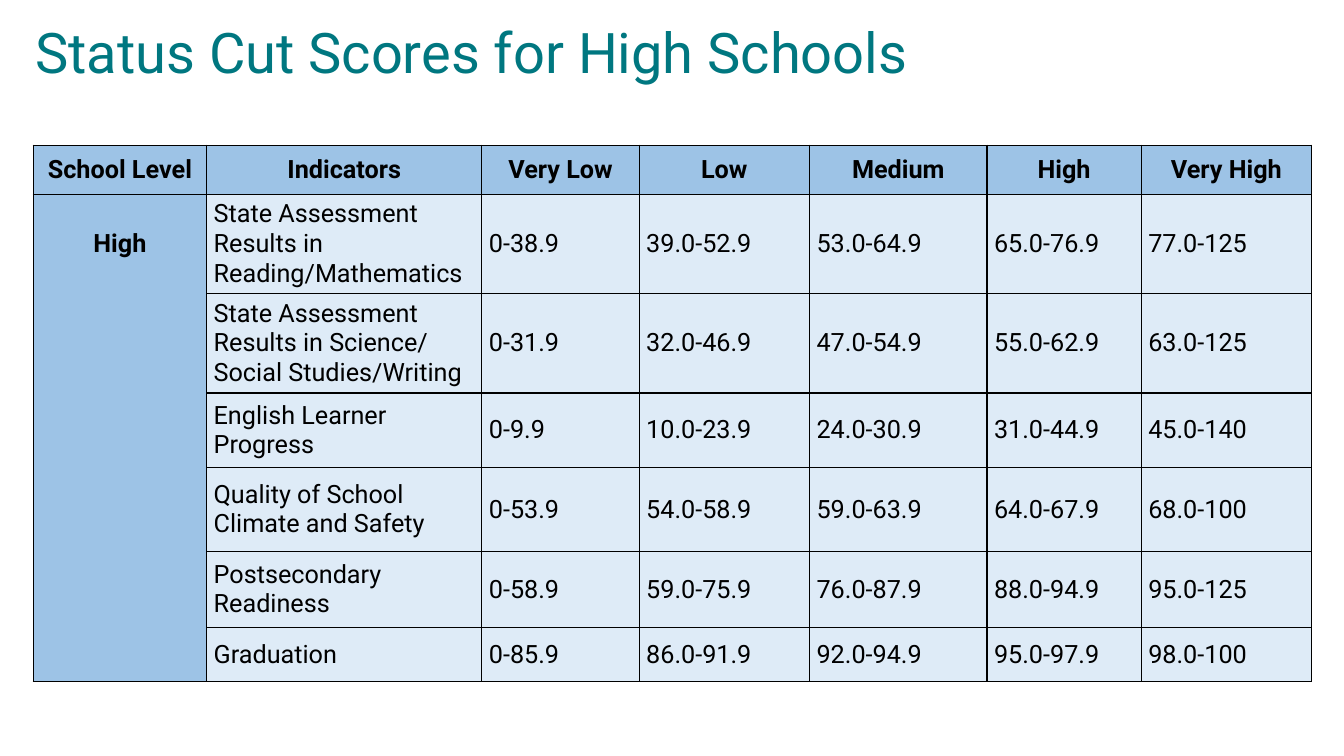
import pptx
import pptx.util
import pptx.dml.color
import pptx.enum.text
import pptx.oxml.ns
import lxml.etree

Inches, Pt = pptx.util.Inches, pptx.util.Pt
RGB = pptx.dml.color.RGBColor.from_string
PP_ALIGN = pptx.enum.text.PP_ALIGN
MIDDLE = pptx.enum.text.MSO_ANCHOR.MIDDLE
qn = pptx.oxml.ns.qn

COLORS = {"title": "007780", "header": "9DC3E6", "body": "DEEBF7", "ink": "000000"}
FONT = "Roboto"


def set_border(cell, side, visible):
    ln = lxml.etree.SubElement(cell._tc.get_or_add_tcPr(), qn(f"a:ln{side}"), w=str(Pt(1)))
    if visible:
        fill = lxml.etree.SubElement(ln, qn("a:solidFill"))
        lxml.etree.SubElement(fill, qn("a:srgbClr"), val=COLORS["ink"])
    else:
        lxml.etree.SubElement(ln, qn("a:noFill"))


prs = pptx.Presentation()
prs.slide_width, prs.slide_height = Inches(13.33), Inches(7.5)
s = prs.slides.add_slide(prs.slide_layouts[5])

# Title
title = s.shapes.title
title.left, title.top, title.width, title.height = 0, 0, Inches(13.33), Inches(1.1)
tf = title.text_frame
tf.text = "Status Cut Scores for High Schools"
tf.word_wrap = True
tf.vertical_anchor = MIDDLE
p = tf.paragraphs[0]
p.alignment = PP_ALIGN.LEFT
p.line_spacing = 0.9
p._p.get_or_add_pPr().set("marL", str(Inches(0.25)))
r = p.runs[0]
r.font.name, r.font.size = FONT, Pt(40)
r.font.color.rgb = RGB(COLORS["title"])

# Cut scores
rows = [
    ["School Level", "Indicators", "Very Low", "Low", "Medium", "High", "Very High"],
    ["High", "State Assessment Results in Reading/Mathematics",
     "0-38.9", "39.0-52.9", "53.0-64.9", "65.0-76.9", "77.0-125"],
    ["", "State Assessment Results in Science/\nSocial Studies/Writing",
     "0-31.9", "32.0-46.9", "47.0-54.9", "55.0-62.9", "63.0-125"],
    ["", "English Learner Progress",
     "0-9.9", "10.0-23.9", "24.0-30.9", "31.0-44.9", "45.0-140"],
    ["", "Quality of School Climate and Safety",
     "0-53.9", "54.0-58.9", "59.0-63.9", "64.0-67.9", "68.0-100"],
    ["", "Postsecondary Readiness",
     "0-58.9", "59.0-75.9", "76.0-87.9", "88.0-94.9", "95.0-125"],
    ["", "Graduation",
     "0-85.9", "86.0-91.9", "92.0-94.9", "95.0-97.9", "98.0-100"],
]
col_widths = [1.72, 2.73, 1.56, 1.69, 1.76, 1.53, 1.69]
row_heights = [0.49, 0.98, 0.99, 0.74, 0.83, 0.76, 0.53]

# Table
table = s.shapes.add_table(len(rows), len(col_widths), Inches(0.33), Inches(1.44),
                           Inches(sum(col_widths)), Inches(sum(row_heights))).table
table.first_row = table.horz_banding = False
for col, width in zip(table.columns, col_widths):
    col.width = Inches(width)
for row, height in zip(table.rows, row_heights):
    row.height = Inches(height)

for i, row in enumerate(rows):
    for j, text in enumerate(row):
        cell = table.cell(i, j)
        heading = i == 0 or j == 0

        # The school level column has no lines between its body rows
        set_border(cell, "L", True)
        set_border(cell, "R", True)
        set_border(cell, "T", j > 0 or i < 2)
        set_border(cell, "B", j > 0 or i in (0, len(rows) - 1))
        cell.fill.solid()
        cell.fill.fore_color.rgb = RGB(COLORS["header" if heading else "body"])

        cell.margin_left = cell.margin_right = Inches(0.07)
        cell.margin_top = cell.margin_bottom = 0
        cell.vertical_anchor = MIDDLE
        p = cell.text_frame.paragraphs[0]
        p.text = text
        p.alignment = PP_ALIGN.CENTER if heading else PP_ALIGN.LEFT
        for r in p.runs:
            r.font.name, r.font.size, r.font.bold = FONT, Pt(18), heading
            r.font.color.rgb = RGB(COLORS["ink"])

prs.save("out.pptx")
